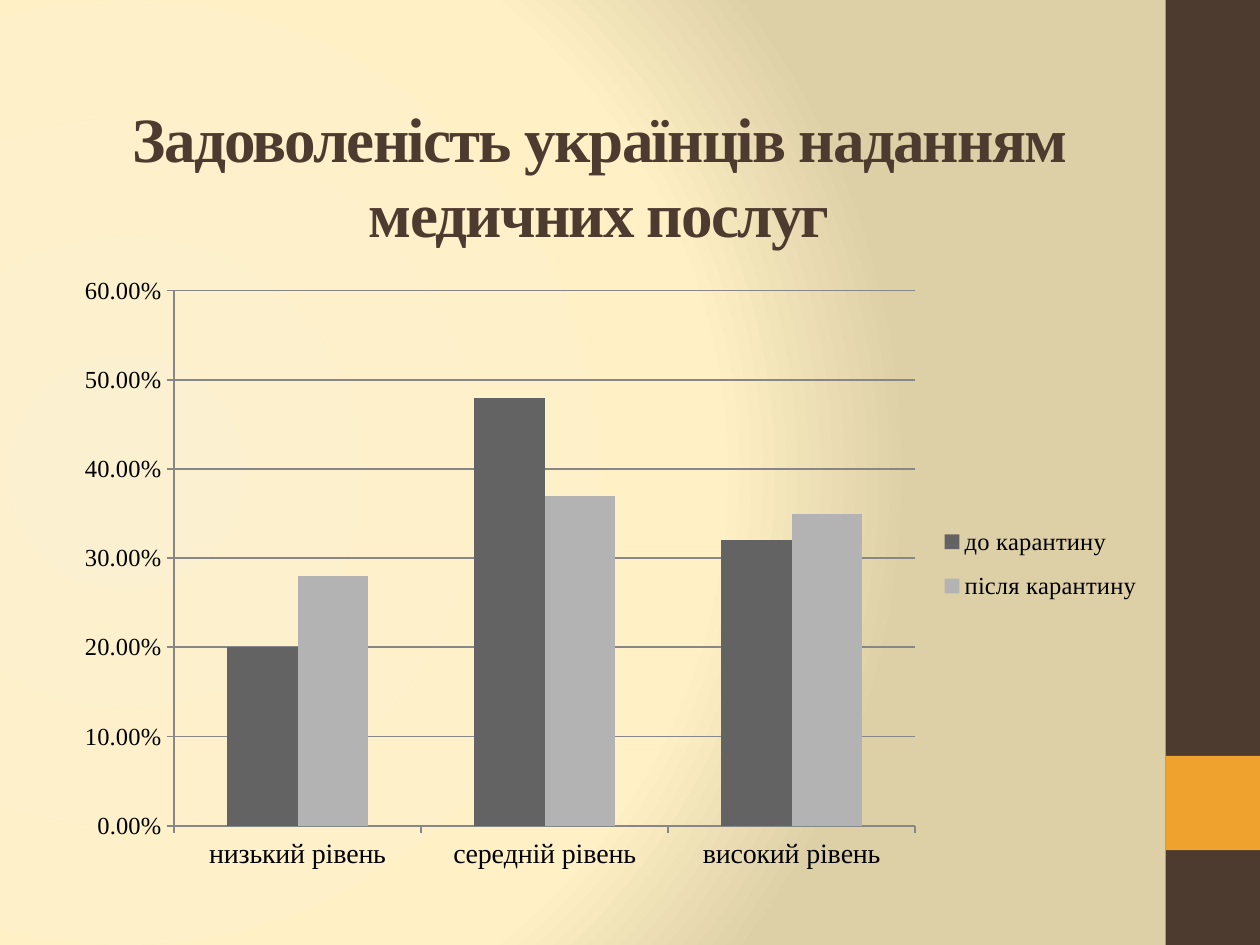
from dataclasses import dataclass

from pptx import Presentation
from pptx.chart.data import CategoryChartData
from pptx.dml.color import RGBColor
from pptx.enum import chart as ch, shapes, text
from pptx.oxml import parse_xml
from pptx.oxml.ns import nsdecls
from pptx.util import Cm, Pt


@dataclass(frozen=True)
class Theme:
    face: str = "Times New Roman"
    brown: str = "4E3B30"
    gold: str = "F0A22E"
    ink: str = "000000"
    rule: str = "878787"
    bars: tuple = ("636363", "B3B3B3")
    glow: tuple = ((0, "FBF0CF"), (75, "FFF0C5"), (100, "DDCFA6"))
    head: int = 36
    cat: int = 16
    small: int = 14


T = Theme()


def rgb(code):
    return RGBColor.from_string(code)


def style(font, size, color, bold=False):
    font.name, font.size, font.bold = T.face, Pt(size), bold
    font.color.rgb = rgb(color)


def backdrop(slide):
    slide.background.fill.gradient()
    old = slide._element.xpath("p:cSld/p:bg/p:bgPr/a:gradFill")[0]
    stops = "".join(
        f'<a:gs pos="{pos * 1000}"><a:srgbClr val="{code}"/></a:gs>'
        for pos, code in T.glow)
    new = parse_xml(
        f'<a:gradFill {nsdecls("a")} rotWithShape="1"><a:gsLst>{stops}</a:gsLst>'
        '<a:path path="circle"><a:fillToRect l="20000" t="50000" r="100000" '
        'b="50000"/></a:path></a:gradFill>')
    old.getparent().replace(old, new)


def block(slide, box, color):
    rect = slide.shapes.add_shape(shapes.MSO_SHAPE.RECTANGLE, *box)
    rect.shadow.inherit = False
    rect.fill.solid()
    rect.fill.fore_color.rgb = rgb(color)
    rect.line.fill.background()


def sidebar(slide, box):
    left, top, width, height = box
    block(slide, box, T.brown)
    block(slide, (left, top + int(height * 0.8), width, width), T.gold)


def heading(slide, box, words):
    title = slide.shapes.title
    title.left, title.top, title.width, title.height = box
    frame = title.text_frame
    frame.text = words
    frame.word_wrap = True
    frame.auto_size = text.MSO_AUTO_SIZE.NONE
    frame.vertical_anchor = text.MSO_ANCHOR.MIDDLE
    para = frame.paragraphs[0]
    para.alignment = text.PP_ALIGN.CENTER
    para.line_spacing = 1.0
    style(para.font, T.head, T.brown, True)
    para.runs[0].font._element.set("spc", "-100")


def rule_style(line):
    line.color.rgb = rgb(T.rule)
    line.width = Pt(1)


def axis_style(axis, size):
    axis.major_tick_mark = ch.XL_TICK_MARK.OUTSIDE
    axis.minor_tick_mark = ch.XL_TICK_MARK.NONE
    rule_style(axis.format.line)
    style(axis.tick_labels.font, size, T.ink)


def key(chart, box):
    chart.has_legend = True
    legend = chart.legend
    legend.position = ch.XL_LEGEND_POSITION.RIGHT
    legend.include_in_layout = False
    style(legend.font, T.small, T.ink)
    sides = "".join(f'<c:{side} val="{val}"/>' for side, val in zip("xywh", box))
    for old in legend._element.xpath("c:layout"):
        legend._element.remove(old)
    legend._element.xpath("c:legendPos")[0].addnext(parse_xml(
        f'<c:layout {nsdecls("c")}><c:manualLayout><c:xMode val="edge"/>'
        f'<c:yMode val="edge"/>{sides}</c:manualLayout></c:layout>'))


def bar_chart(slide, box, cats, rows):
    data = CategoryChartData(number_format="0.00%")
    data.categories = cats
    for name, vals in rows.items():
        data.add_series(name, vals)
    kind = ch.XL_CHART_TYPE.COLUMN_CLUSTERED
    chart = slide.shapes.add_chart(kind, *box, data).chart
    style(chart.font, T.small, T.ink)
    chart.has_title = False
    key(chart, (0.8, 0.4, 0.19, 0.17))

    axis_style(chart.category_axis, T.cat)
    axis = chart.value_axis
    axis_style(axis, T.small)
    axis.minimum_scale, axis.maximum_scale, axis.major_unit = 0, 0.6, 0.1
    axis.tick_labels.number_format = "0.00%"
    axis.tick_labels.number_format_is_linked = False
    axis.has_major_gridlines = True
    rule_style(axis.major_gridlines.format.line)

    plot = chart.plots[0]
    plot.vary_by_categories = False
    plot.gap_width, plot.overlap = 150, 0
    for row, color in zip(plot.series, T.bars):
        row.format.fill.solid()
        row.format.fill.fore_color.rgb = rgb(color)


def main():
    deck = Presentation()
    deck.slide_width, deck.slide_height = Cm(25.4), Cm(19.05)
    slide = deck.slides.add_slide(deck.slide_layouts[5])
    backdrop(slide)
    sidebar(slide, (Cm(23.5), 0, Cm(1.9), deck.slide_height))
    heading(slide, (Cm(1.5), Cm(1.93), Cm(21.16), Cm(3.18)),
            "Задоволеність українців наданням медичних послуг")
    bar_chart(slide, (Cm(1.27), Cm(5.33), Cm(22.02), Cm(12.45)),
              ("низький рівень", "середній рівень", "високий рівень"),
              {"до карантину": (0.2, 0.48, 0.32),
               "після карантину": (0.28, 0.37, 0.35)})
    deck.save("out.pptx")


if __name__ == "__main__":
    main()
